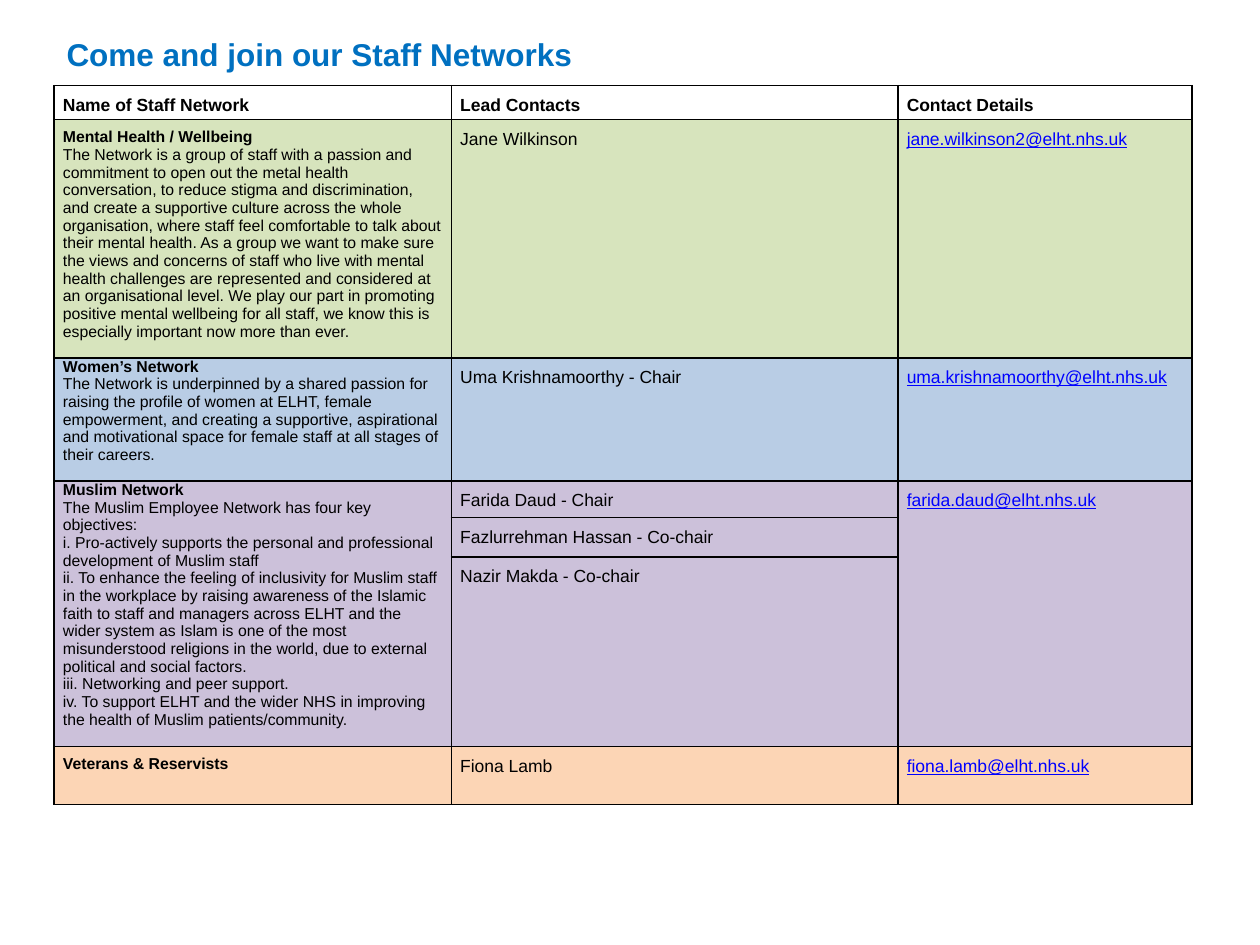
from lxml import etree
from pptx import Presentation
from pptx.dml.color import RGBColor
from pptx.oxml import ns
from pptx.util import Inches, Pt

BLACK = RGBColor(0x00, 0x00, 0x00)
WHITE = RGBColor(0xFF, 0xFF, 0xFF)
TITLE_BLUE = RGBColor(0x00, 0x70, 0xC0)
LINK_BLUE = RGBColor(0x00, 0x00, 0xFF)
GREEN = RGBColor(0xD7, 0xE4, 0xBD)
BLUE = RGBColor(0xB9, 0xCD, 0xE5)
PURPLE = RGBColor(0xCC, 0xC1, 0xDA)
ORANGE = RGBColor(0xFC, 0xD5, 0xB5)

HEADINGS = ["Name of Staff Network", "Lead Contacts", "Contact Details"]
COLUMN_WIDTHS = [3.15, 3.54, 2.33]

NETWORKS = [
    {
        "name": "Mental Health / Wellbeing",
        "about": [
            "The Network is a group of staff with a passion and commitment to open out "
            "the metal health conversation, to reduce stigma and discrimination, and "
            "create a supportive culture across the whole organisation, where staff feel "
            "comfortable to talk about their mental health. As a group we want to make "
            "sure the views and concerns of staff who live with mental health challenges "
            "are represented and considered at an organisational level. We play our part "
            "in promoting positive mental wellbeing for all staff, we know this is "
            "especially important now more than ever."
        ],
        "leads": ["Jane Wilkinson"],
        "email": "jane.wilkinson2@elht.nhs.uk",
        "heights": [1.89],
        "name_spacing": 1.5,
        "color": GREEN,
    },
    {
        "name": "Women’s Network",
        "about": [
            "The Network is underpinned by a shared passion for raising the profile of "
            "women at ELHT, female empowerment, and creating a supportive, aspirational "
            "and motivational space for female staff at all stages of their careers."
        ],
        "leads": ["Uma Krishnamoorthy - Chair"],
        "email": "uma.krishnamoorthy@elht.nhs.uk",
        "heights": [0.98],
        "name_spacing": 1,
        "color": BLUE,
    },
    {
        "name": "Muslim Network",
        "about": [
            "The Muslim Employee Network has four key objectives:",
            "i. Pro-actively supports the personal and professional development of "
            "Muslim staff",
            "ii. To enhance the feeling of inclusivity for Muslim staff in the workplace "
            "by raising awareness of the Islamic faith to staff and managers across ELHT "
            "and the wider system as Islam is one of the most misunderstood religions in "
            "the world, due to external political and social factors.",
            "iii. Networking and peer support.",
            "iv. To support ELHT and the wider NHS in improving the health of Muslim "
            "patients/community.",
        ],
        "leads": [
            "Farida Daud - Chair",
            "Fazlurrehman Hassan - Co-chair",
            "Nazir Makda - Co-chair",
        ],
        "email": "farida.daud@elht.nhs.uk",
        "heights": [0.29, 0.31, 1.5],
        "name_spacing": 1,
        "color": PURPLE,
    },
    {
        "name": "Veterans & Reservists",
        "about": [],
        "leads": ["Fiona Lamb"],
        "email": "fiona.lamb@elht.nhs.uk",
        "heights": [0.46],
        "name_spacing": 1.5,
        "color": ORANGE,
    },
]


def write(paragraph, wording, size=10, color=BLACK, bold=False, link=False, spacing=1.5):
    paragraph.text = wording
    paragraph.line_spacing = spacing
    font = paragraph.font
    font.name = "Arial"
    font.size = Pt(size)
    font.bold = bold
    font.underline = link
    font.color.rgb = LINK_BLUE if link else color


def style_cell(cell, color):
    cell.margin_left = cell.margin_right = Inches(0.07)
    cell.margin_top = cell.margin_bottom = 0
    properties = cell._tc.get_or_add_tcPr()
    for side in ("lnL", "lnR", "lnT", "lnB"):
        line = etree.SubElement(properties, ns.qn(f"a:{side}"), w=str(Pt(1)))
        solid = etree.SubElement(line, ns.qn("a:solidFill"))
        etree.SubElement(solid, ns.qn("a:srgbClr"), val=str(BLACK))
    cell.fill.solid()
    cell.fill.fore_color.rgb = color


def add_title(slide, left, top, width, height):
    frame = slide.shapes.add_textbox(left, top, width, height).text_frame
    frame.word_wrap = True
    write(frame.paragraphs[0], "Come and join our Staff Networks", 18, TITLE_BLUE, True,
          spacing=1)


def fill_network(table, first, network):
    last = first + len(network["leads"]) - 1
    for row, lead in enumerate(network["leads"], first):
        for column in range(len(HEADINGS)):
            style_cell(table.cell(row, column), network["color"])
        write(table.cell(row, 1).text_frame.paragraphs[0], lead)
    if last > first:
        for column in (0, 2):
            table.cell(first, column).merge(table.cell(last, column))
    description = table.cell(first, 0).text_frame
    write(description.paragraphs[0], network["name"], 9, bold=True,
          spacing=network["name_spacing"])
    for wording in network["about"]:
        write(description.add_paragraph(), wording, 9, spacing=1)
    write(table.cell(first, 2).text_frame.paragraphs[0], network["email"], link=True)
    return last + 1


def add_network_table(slide, left, top, width):
    heights = [0.27] + [height for network in NETWORKS for height in network["heights"]]
    table = slide.shapes.add_table(
        len(heights), len(HEADINGS), left, top, width, Inches(sum(heights))
    ).table
    table.first_row = table.horz_banding = False
    for column, share in zip(table.columns, COLUMN_WIDTHS):
        column.width = int(width * share / sum(COLUMN_WIDTHS))
    for row, height in zip(table.rows, heights):
        row.height = Inches(height)
    for cell, heading in zip(table.rows[0].cells, HEADINGS):
        style_cell(cell, WHITE)
        write(cell.text_frame.paragraphs[0], heading, bold=True)
    row = 1
    for network in NETWORKS:
        row = fill_network(table, row, network)


def main():
    presentation = Presentation()
    presentation.slide_width = Inches(10)
    presentation.slide_height = Inches(7.5)
    slide = presentation.slides.add_slide(presentation.slide_layouts[6])
    add_title(slide, Inches(0.43), Inches(0.23), Inches(7.66), Inches(0.61))
    add_network_table(slide, Inches(0.43), Inches(0.68), Inches(9.03))
    presentation.save("out.pptx")


if __name__ == "__main__":
    main()
